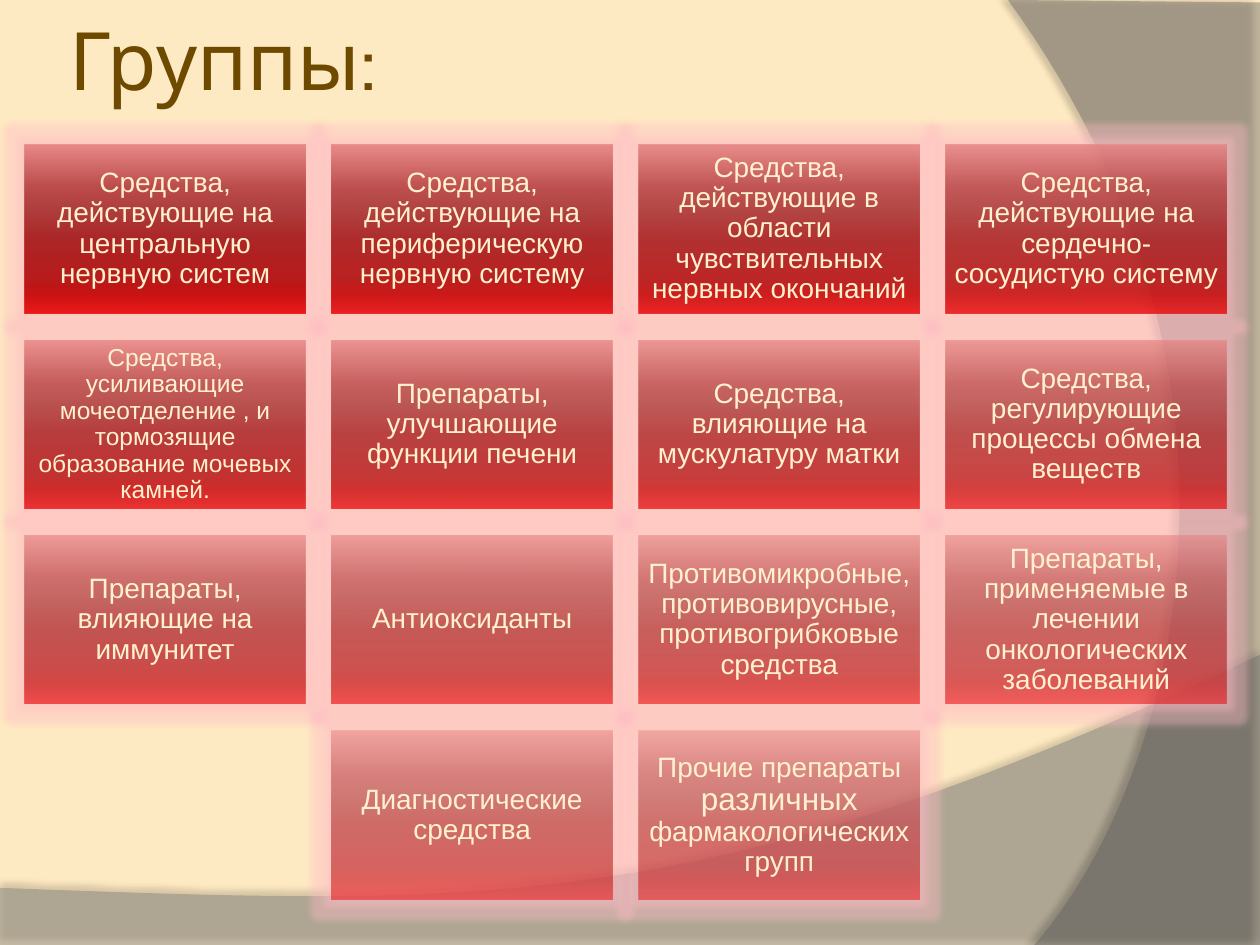
"""Build a slide listing drug groups as a grid of translucent red cards."""
from dataclasses import dataclass
from typing import NamedTuple

from pptx import Presentation
from pptx.dml.color import RGBColor
from pptx.enum.shapes import MSO_SHAPE
from pptx.enum.text import MSO_ANCHOR, PP_ALIGN
from pptx.oxml import parse_xml
from pptx.oxml.ns import nsdecls, qn
from pptx.util import Cm, Pt

RECTANGLE = MSO_SHAPE.RECTANGLE
MIDDLE = MSO_ANCHOR.MIDDLE
LEFT, CENTER = PP_ALIGN.LEFT, PP_ALIGN.CENTER

COLORS = {
    "page": "FEEAC2", "title": "6E4A01", "text": "FFF1CE", "glow": "FFBBC5",
    "hill": "7F7F7F", "side": "5E5E5E", "shadow": "000000",
}
CARD_STOPS = {
    0: "E68383", 25: "B64041", 38: "A73131", 55: "A41718",
    80: "B2090A", 88: "C40001", 100: "EB090B",
}
COLUMNS = 4
CARD_LEFT, CARD_TOP, CARD_WIDTH, CARD_HEIGHT = 0.5, 2.92, 5.66, 3.39
COLUMN_STEP, ROW_STEP = 6.19, 3.94
FIRST_ALPHA, LAST_ALPHA = 90, 50
CURVE_STEPS = 60


class Point(NamedTuple):
    """A position in centimetres."""
    x: float
    y: float


class Run(NamedTuple):
    """A stretch of text with one size."""
    text: str
    size: int = 16


@dataclass(frozen=True)
class Wave:
    """A translucent shape bounded by one cubic curve and straight sides."""
    curve: tuple[Point, Point, Point, Point]
    corners: tuple[Point, ...]
    color: str
    alpha: int
    shadow_alpha: int
    shadow_distance: float
    shadow_angle: int


@dataclass(frozen=True)
class Card:
    """One drug group."""
    runs: tuple[Run, ...]
    inset: float = 0.17


WAVES = (
    Wave((Point(25.4, 13.2), Point(14.2, 18.52), Point(9.93, 18.26), Point(0, 17.9)),
         (Point(0, 19.07), Point(25.4, 19.07)), "hill", 45, 35, 3.5, 270),
    Wave((Point(20.85, 19.05), Point(23.75, 15.72), Point(25.86, 7.62), Point(20.32, 0)),
         (Point(25.4, 0.05), Point(25.4, 19.05)), "side", 40, 45, 4, 180),
)
CARDS = (
    Card((Run("Средства, действующие на центральную нервную систем"),)),
    Card((Run("Средства, действующие на периферическую нервную систему"),)),
    Card((Run("Средства, действующие в области чувствительных нервных окончаний"),)),
    Card((Run("Средства, действующие на сердечно-сосудистую систему"),)),
    Card((Run("Средства, усиливающие мочеотделение , и тормозящие "
              "образование мочевых камней.", 14),), 0.15),
    Card((Run("Препараты, улучшающие функции печени"),)),
    Card((Run("Средства, влияющие на мускулатуру матки"),)),
    Card((Run("Средства, регулирующие процессы обмена веществ"),)),
    Card((Run("Препараты, влияющие на иммунитет"),)),
    Card((Run("Антиоксиданты"),)),
    Card((Run("Противомикробные, противовирусные, противогрибковые средства"),)),
    Card((Run("Препараты, применяемые в лечении онкологических заболеваний"),)),
    Card((Run("Диагностические средства"),)),
    Card((Run("Прочие препараты "), Run("различных", 18),
          Run(" фармакологических групп"))),
)


def color_xml(color: str, alpha: float) -> str:
    """Return a colour element with its opacity in percent."""
    return f'<a:srgbClr val="{color}"><a:alpha val="{round(alpha * 1000)}"/></a:srgbClr>'


def add_effect(shape, xml: str) -> None:
    """Replace the inherited effects of a shape with one effect."""
    shape.shadow.inherit = False
    shape._element.spPr.find(qn("a:effectLst")).append(parse_xml(xml))


def write_text(shape, runs: tuple[Run, ...], font: str, color: str,
               align: PP_ALIGN, inset: float, spacing: float) -> None:
    """Fill a shape with one formatted paragraph."""
    frame = shape.text_frame
    margins = {f"margin_{side}": Cm(inset) for side in ("left", "top", "right", "bottom")}
    for name, value in {"word_wrap": True, "vertical_anchor": MIDDLE, **margins}.items():
        setattr(frame, name, value)
    para = frame.paragraphs[0]
    for name, value in {"alignment": align, "line_spacing": spacing}.items():
        setattr(para, name, value)
    for run in runs:
        span = para.add_run()
        span.text = run.text
        for name, value in {"name": font, "size": Pt(run.size)}.items():
            setattr(span.font, name, value)
        span.font.color.rgb = RGBColor.from_string(COLORS[color])


def curve_points(curve: tuple[Point, ...]) -> list[tuple[int, int]]:
    """Sample a cubic curve."""
    points = []
    for step in range(CURVE_STEPS + 1):
        t = step / CURVE_STEPS
        weights = ((1 - t) ** 3, 3 * t * (1 - t) ** 2, 3 * t * t * (1 - t), t ** 3)
        points.append((Cm(sum(w * p.x for w, p in zip(weights, curve))),
                       Cm(sum(w * p.y for w, p in zip(weights, curve)))))
    return points


def draw_wave(page, wave: Wave) -> None:
    """Draw a background wave with its soft shadow."""
    points = curve_points(wave.curve) + [(Cm(p.x), Cm(p.y)) for p in wave.corners]
    builder = page.shapes.build_freeform(*points[0])
    builder.add_line_segments(points[1:], close=True)
    shape = builder.convert_to_shape()
    shape.fill.solid()
    shape.fill.fore_color.rgb = RGBColor.from_string(COLORS[wave.color])
    fill_color = shape._element.spPr.find(qn("a:solidFill"))[0]
    fill_color.append(parse_xml(f'<a:alpha {nsdecls("a")} val="{wave.alpha * 1000}"/>'))
    shape.line.fill.background()
    add_effect(shape, f'<a:outerShdw {nsdecls("a")} blurRad="{Pt(4)}" '
                      f'dist="{Pt(wave.shadow_distance)}" dir="{wave.shadow_angle * 60000}" '
                      f'algn="ctr" rotWithShape="0">'
                      f'{color_xml(COLORS["shadow"], wave.shadow_alpha)}</a:outerShdw>')


def draw_card(page, card: Card, place: Point, alpha: float) -> None:
    """Draw one glowing gradient card."""
    box = page.shapes.add_shape(RECTANGLE, Cm(place.x), Cm(place.y),
                                Cm(CARD_WIDTH), Cm(CARD_HEIGHT))
    box.line.fill.background()
    stops = "".join(f'<a:gs pos="{position * 1000}">{color_xml(color, alpha)}</a:gs>'
                    for position, color in CARD_STOPS.items())
    box._element.spPr.find(qn("a:ln")).addprevious(parse_xml(
        f'<a:gradFill {nsdecls("a")} rotWithShape="1"><a:gsLst>{stops}</a:gsLst>'
        f'<a:lin ang="5400000" scaled="0"/></a:gradFill>'))
    add_effect(box, f'<a:glow {nsdecls("a")} rad="{Pt(8)}">'
                    f'{color_xml(COLORS["glow"], 40)}</a:glow>')
    write_text(box, card.runs, "Arial", "text", CENTER, card.inset, 0.9)


def draw_cards(page) -> None:
    """Lay the cards out in rows, centring the last one."""
    for index, card in enumerate(CARDS):
        row, column = divmod(index, COLUMNS)
        row_length = min(COLUMNS, len(CARDS) - row * COLUMNS)
        column += (COLUMNS - row_length) / 2
        place = Point(CARD_LEFT + column * COLUMN_STEP, CARD_TOP + row * ROW_STEP)
        fade = (FIRST_ALPHA - LAST_ALPHA) * index / (len(CARDS) - 1)
        draw_card(page, card, place, FIRST_ALPHA - fade)


def main() -> None:
    """Create and save the deck."""
    deck = Presentation()
    for name, value in {"slide_width": Cm(25.4), "slide_height": Cm(19.05)}.items():
        setattr(deck, name, value)
    page = deck.slides.add_slide(deck.slide_layouts[6])
    page.background.fill.solid()
    page.background.fill.fore_color.rgb = RGBColor.from_string(COLORS["page"])
    for wave in WAVES:
        draw_wave(page, wave)
    title = page.shapes.add_textbox(Cm(1.27), Cm(0), Cm(20.75), Cm(2.34))
    write_text(title, (Run("Группы:", 46),), "Cabin", "title", LEFT, 0.13, 1.0)
    draw_cards(page)
    deck.save("out.pptx")


if __name__ == "__main__":
    main()
